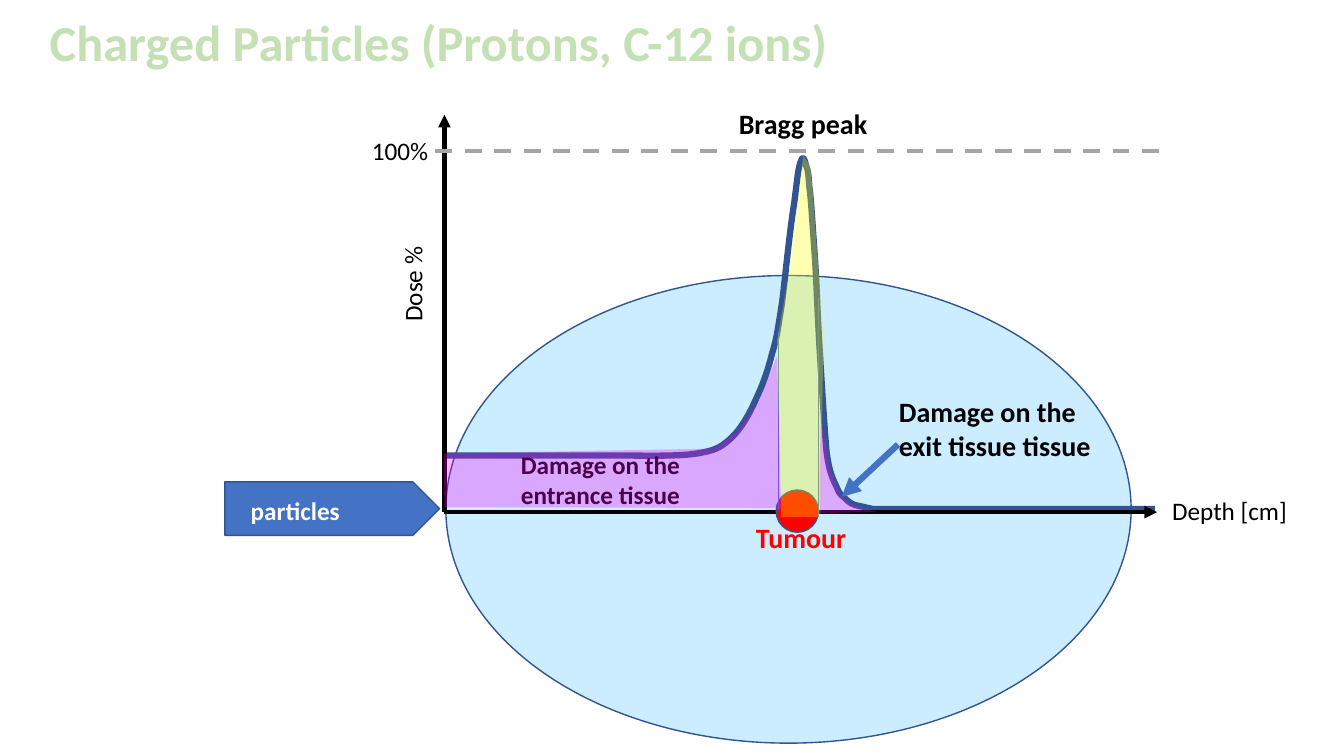
"""Build a slide showing the Bragg peak of charged particles crossing a tumour."""
import pptx
import pptx.dml.color
import pptx.enum.dml
import pptx.enum.shapes
import pptx.enum.text
import pptx.oxml
import pptx.oxml.ns
import pptx.util

Pt = pptx.util.Pt
RGB = pptx.dml.color.RGBColor.from_string
SHAPE = pptx.enum.shapes.MSO_SHAPE
STRAIGHT = pptx.enum.shapes.MSO_CONNECTOR.STRAIGHT
ANCHOR = pptx.enum.text.MSO_ANCHOR
ALIGN = pptx.enum.text.PP_ALIGN
NS = pptx.oxml.ns.nsdecls("a")


class Theme:
    font = "Calibri"
    title, heading, label = 36, 20, 18
    pale_green, black, white, red = "C5E0B4", "000000", "FFFFFF", "FF0000"
    body, outline, blue, grey = "CCECFF", "325491", "4472C4", "A5A5A5"
    magenta, yellow = "FF00FF", "FFFF00"


def write(sp, text, size=Theme.label, color=Theme.black, bold=False, align=ALIGN.LEFT, spacing=1.0):
    tf = sp.text_frame
    tf.word_wrap = True
    tf.vertical_anchor = ANCHOR.TOP
    p = tf.paragraphs[0]
    p.alignment, p.line_spacing = align, spacing
    r = p.add_run()
    r.text = text
    r.font.name, r.font.size, r.font.bold = Theme.font, Pt(size), bold
    r.font.color.rgb = RGB(color)


def style(sp, fill=None, line=None, width=1, alpha=None):
    sp.shadow.inherit = False
    if fill:
        sp.fill.solid()
        sp.fill.fore_color.rgb = RGB(fill)
    else:
        sp.fill.background()
    if alpha:
        clr = sp.fill._xPr.find(".//" + pptx.oxml.ns.qn("a:srgbClr"))
        clr.append(pptx.oxml.parse_xml(f'<a:alpha {NS} val="{alpha * 1000}"/>'))
    if line:
        sp.line.color.rgb = RGB(line)
        sp.line.width = Pt(width)
    else:
        sp.line.fill.background()


prs = pptx.Presentation()
prs.slide_width, prs.slide_height = Pt(960), Pt(540)
s = prs.slides.add_slide(prs.slide_layouts[5])

title = s.shapes.title
title.left, title.top, title.width, title.height = Pt(5), Pt(13), Pt(617), Pt(54)
title.text_frame.margin_top = title.text_frame.margin_bottom = 0
write(title, "Charged Particles (Protons, C-12 ions)", size=Theme.title, color=Theme.pale_green,
      bold=True, align=ALIGN.CENTER, spacing=0.9)

body = s.shapes.add_shape(SHAPE.OVAL, Pt(318.5), Pt(196.8), Pt(489.5), Pt(334))
style(body, fill=Theme.body, line=Theme.outline)

bezier_segments = [
    ((460.8, 325.4), (483.8, 326.2), (497.5, 324)),
    ((511.2, 321.8), (514.8, 319.7), (522, 313.2)),
    ((529.2, 306.7), (535.7, 295.2), (540, 285.1)),
    ((545, 275), (548.6, 264.2), (551.5, 252.7)),
    ((555.1, 241.2), (555.8, 234), (558.7, 216)),
    ((560.9, 198), (564.5, 161.3), (567.4, 144.7)),
    ((569.5, 128.2), (570.2, 118.8), (572.4, 114.5)),
    ((573.8, 110.2), (575.3, 115.9), (576, 118.8)),
    ((577.4, 122.4), (577.4, 123.8), (578.2, 133.9)),
    ((579.6, 144), (580.3, 159.8), (581.8, 179.3)),
    ((583.2, 198), (583.9, 223.9), (585.4, 247.7)),
    ((586.8, 272.2), (589, 306), (590.4, 322.6)),
    ((592.6, 339.1), (595.4, 342.7), (597.6, 347.8)),
    ((599.8, 353.5), (601.2, 353.5), (603.4, 355.7)),
    ((605.5, 357.8), (607, 359.3), (610.6, 360.7)),
    ((613.4, 361.4), (623.5, 363.6), (623.5, 363.6)),
]
STEPS = 8
dose = [(316, 325.4), (439.9, 325.4)]
for c1, c2, end in bezier_segments:
    start = dose[-1]
    for i in range(1, STEPS + 1):
        t = i / STEPS
        dose.append(tuple((1 - t) ** 3 * a + 3 * (1 - t) ** 2 * t * b + 3 * (1 - t) * t ** 2 * c + t ** 3 * d
                          for a, b, c, d in zip(start, c1, c2, end)))
dose.append((825, 363.6))

entrance = [(317.5, 362.2), (316.8, 324), (510.5, 320.4), (527, 308.2), (542.9, 285.1), (555.1, 254.2),
            (558, 362.9)]
peak = [(558, 369.4), (586.1, 369.4), (588.2, 241.9), (580.3, 134.6), (578.9, 118.1), (573.8, 111.6),
        (572.4, 122.4), (564.5, 190.1), (555.1, 243.4)]
exit_dose = [(586.1, 296.6), (585.4, 366.5), (627.1, 365.8), (614.9, 362.9), (608.4, 360), (605.5, 357.8),
             (601.2, 355), (597.6, 347.8), (595.4, 342), (591.8, 331.2), (591.1, 322.6), (587.5, 306.7),
             (586.1, 304.6)]

outlines = {
    "curve": (dose, False, dict(line=Theme.outline, width=4.5)),
    "entrance": (entrance, True, dict(fill=Theme.magenta, alpha=29)),
    "peak": (peak, True, dict(fill=Theme.yellow, alpha=30)),
    "exit": (exit_dose, True, dict(fill=Theme.magenta, alpha=28)),
}
lines = {
    "axes": [(317.5, 365.8, 317.5, 82, Theme.black, 3, "arrow"),
             (317.5, 365.8, 826.5, 365.8, Theme.black, 3, "arrow"),
             (311, 108, 832.3, 108, Theme.grey, 3, "dash")],
    "tumour edges": [(555.8, 237, 555.8, 364.3, Theme.blue, 0.5, None),
                     (584.6, 213, 584.6, 369.4, Theme.blue, 0.5, None)],
    "pointer": [(641.5, 317.5, 601.2, 355, Theme.blue, 4.5, "arrow")],
}
labels = [
    ("Dose %", (254.2, 182.2, 80.6, 28.8), dict()),
    ("Bragg peak", (520.6, 72.7, 109.4, 31.7), dict(size=Theme.heading, bold=True)),
    ("Tumour", (532.8, 367.9, 82, 31.7), dict(size=Theme.heading, color=Theme.red, bold=True)),
    ("Damage on the entrance tissue", (365, 317.5, 148.3, 51), dict(bold=True)),
    ("Damage on the exit tissue tissue", (635, 278.6, 162.7, 55.4), dict(size=Theme.heading, bold=True)),
    ("Depth [cm]", (830.2, 350.6, 104.4, 28.8), dict()),
    ("100%", (258.5, 92.9, 72, 28.8), dict()),
]

for layer in ["curve", "axes", "labels", "tumour", "tumour edges", "entrance", "peak", "pointer", "exit"]:
    if layer in outlines:
        points, closed, look = outlines[layer]
        (x, y), *rest = [(Pt(a), Pt(b)) for a, b in points]
        builder = s.shapes.build_freeform(x, y)
        builder.add_line_segments(rest, close=closed)
        style(builder.convert_to_shape(), **look)
    elif layer == "labels":
        for text, box, look in labels:
            sp = s.shapes.add_textbox(*map(Pt, box))
            sp.rotation = 270 if text == "Dose %" else 0
            write(sp, text, **look)
    elif layer == "tumour":
        tumour = s.shapes.add_shape(SHAPE.OVAL, Pt(559.4 - 5), Pt(347.8 + 2), Pt(30.2), Pt(30.2))
        tumour.top = Pt(350)
        style(tumour, fill=Theme.red, line=Theme.outline)
    else:
        for x1, y1, x2, y2, color, width, kind in lines[layer]:
            cx = s.shapes.add_connector(STRAIGHT, Pt(x1), Pt(y1), Pt(x2), Pt(y2))
            cx.line.color.rgb = RGB(color)
            cx.line.width = Pt(width)
            if kind == "dash":
                cx.line.dash_style = pptx.enum.dml.MSO_LINE.DASH
            elif kind == "arrow":
                cx.line._get_or_add_ln().append(pptx.oxml.parse_xml(f'<a:tailEnd {NS} type="triangle"/>'))
            cx._element.spPr.append(pptx.oxml.parse_xml(f"<a:effectLst {NS}/>"))

beam = s.shapes.add_group_shape()
arrow = beam.shapes.add_shape(SHAPE.PENTAGON, Pt(160.6), Pt(344.2), Pt(153.4), Pt(38.2))
style(arrow, fill=Theme.blue, line=Theme.outline)
write(beam.shapes.add_textbox(Pt(172), Pt(350.6), Pt(123), Pt(28.8)), "particles", color=Theme.white, bold=True)

prs.save("out.pptx")
